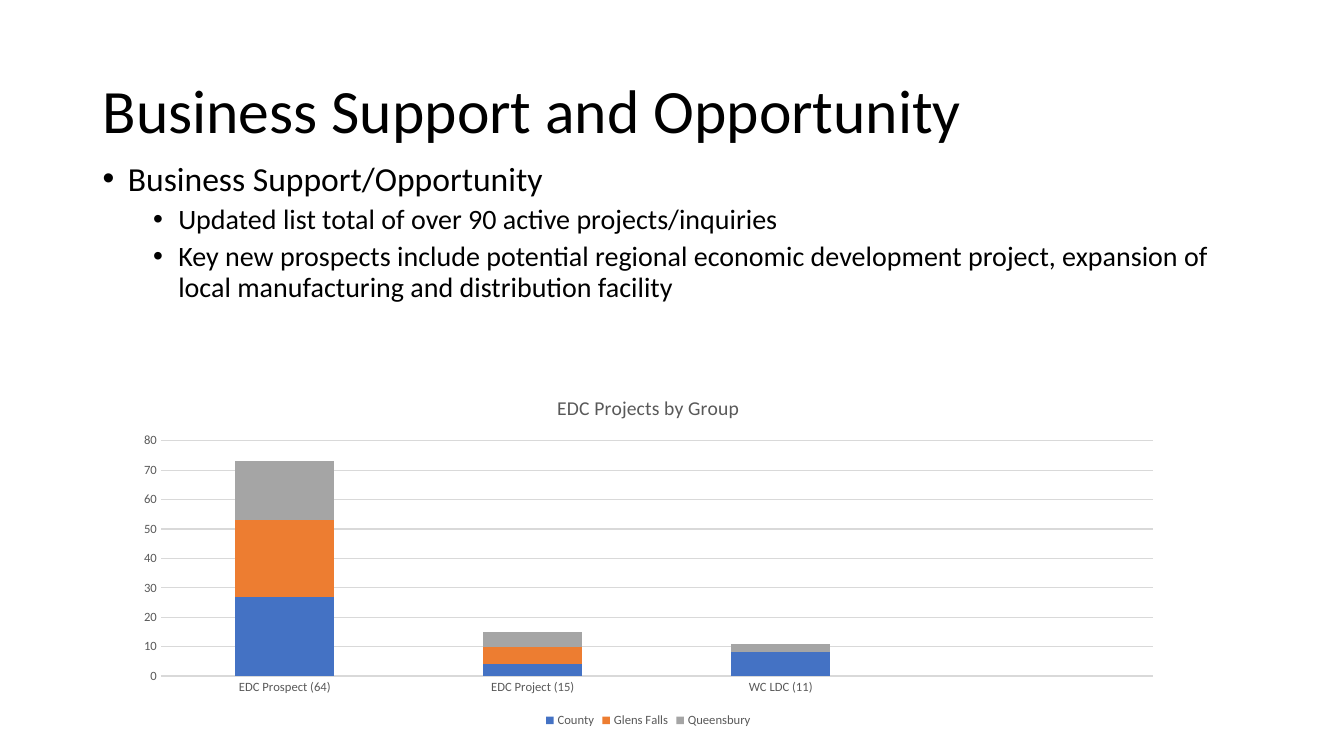
from dataclasses import dataclass

from lxml.etree import SubElement
from pptx import Presentation
from pptx.chart.data import CategoryChartData
from pptx.dml.color import RGBColor
from pptx.enum.chart import XL_CHART_TYPE as ChartType
from pptx.enum.chart import XL_LEGEND_POSITION as LegendPosition
from pptx.enum.chart import XL_TICK_MARK as TickMark
from pptx.enum.text import MSO_ANCHOR as Anchor
from pptx.oxml.ns import qn
from pptx.util import Inches, Pt

FONT = "Calibri"
COLORS = {
    "text": "000000",
    "label": "595959",
    "grid": "D9D9D9",
    "county": "4472C4",
    "glens_falls": "ED7D31",
    "queensbury": "A5A5A5",
}


@dataclass
class Bullet:
    text: str
    level: int
    size: int
    space_before: int


@dataclass
class Municipality:
    name: str
    counts: tuple[int | None, ...]
    color: str


BULLETS = [
    Bullet("Business Support/Opportunity", 0, 24, 10),
    Bullet("Updated list total of over 90 active projects/inquiries", 1, 20, 5),
    Bullet("Key new prospects include potential regional economic development project, "
           "expansion of local manufacturing and distribution facility", 1, 20, 5),
]
# The last group is an unlabelled, empty slot
GROUPS = ["EDC Prospect (64)", "EDC Project (15)", "WC LDC (11)", ""]
MUNICIPALITIES = [
    Municipality("County", (27, 4, 8, None), "county"),
    Municipality("Glens Falls", (26, 6, None, None), "glens_falls"),
    Municipality("Queensbury", (20, 5, 3, None), "queensbury"),
]


def rgb(name: str) -> RGBColor:
    return RGBColor.from_string(COLORS[name])


def style_font(font, size: int, color: str) -> None:
    font.name = FONT
    font.size = Pt(size)
    font.bold = False
    font.color.rgb = rgb(color)


def add_text_frame(slide, left: float, top: float, width: float, height: float):
    frame = slide.shapes.add_textbox(
        Inches(left), Inches(top), Inches(width), Inches(height)).text_frame
    frame.word_wrap = True
    return frame


def add_heading(slide) -> None:
    frame = add_text_frame(slide, 0.92, 0.4, 11.5, 1.45)
    frame.vertical_anchor = Anchor.MIDDLE
    frame.text = "Business Support and Opportunity"
    heading = frame.paragraphs[0]
    heading.line_spacing = 0.9
    style_font(heading.runs[0].font, 44, "text")


def add_bullets(slide) -> None:
    frame = add_text_frame(slide, 0.92, 1.56, 11.5, 4.76)
    frame.text = "\n".join(bullet.text for bullet in BULLETS)
    for paragraph, bullet in zip(frame.paragraphs, BULLETS):
        paragraph.level = bullet.level
        paragraph.line_spacing = 0.9
        paragraph.space_before = Pt(bullet.space_before)
        style_font(paragraph.runs[0].font, bullet.size, "text")
        # Hanging indent and bullet character
        properties = paragraph._p.get_or_add_pPr()
        properties.set("marL", str(Inches(0.25 + 0.5 * bullet.level)))
        properties.set("indent", str(Inches(-0.25)))
        SubElement(properties, qn("a:buFont"), typeface="Arial")
        SubElement(properties, qn("a:buChar"), char="•")


def style_axis(axis) -> None:
    axis.major_tick_mark = TickMark.NONE
    axis.minor_tick_mark = TickMark.NONE
    style_font(axis.tick_labels.font, 9, "label")


def style_line(line) -> None:
    line.color.rgb = rgb("grid")
    line.width = Pt(0.75)


def add_projects_chart(slide) -> None:
    data = CategoryChartData()
    data.categories = GROUPS
    for municipality in MUNICIPALITIES:
        data.add_series(municipality.name, municipality.counts)
    chart = slide.shapes.add_chart(
        ChartType.COLUMN_STACKED, Inches(1.22), Inches(3.75),
        Inches(10.42), Inches(3.51), data).chart
    style_font(chart.font, 10, "text")

    # Title and legend
    chart.has_title = True
    chart_title = chart.chart_title.text_frame
    chart_title.text = "EDC Projects by Group"
    style_font(chart_title.paragraphs[0].runs[0].font, 14, "label")
    chart.has_legend = True
    chart.legend.position = LegendPosition.BOTTOM
    chart.legend.include_in_layout = False
    style_font(chart.legend.font, 9, "label")

    # Axes
    groups, counts = chart.category_axis, chart.value_axis
    style_axis(groups)
    style_axis(counts)
    style_line(groups.format.line)
    counts.format.line.fill.background()
    counts.minimum_scale, counts.maximum_scale, counts.major_unit = 0, 80, 10
    counts.has_major_gridlines = True
    style_line(counts.major_gridlines.format.line)

    # Stacked columns
    columns = chart.plots[0]
    columns.gap_width = 150
    columns.overlap = 100
    columns.vary_by_categories = False
    for series, municipality in zip(columns.series, MUNICIPALITIES):
        series.format.fill.solid()
        series.format.fill.fore_color.rgb = rgb(municipality.color)


def main() -> None:
    presentation = Presentation()
    presentation.slide_width = Inches(13.33)
    presentation.slide_height = Inches(7.5)
    slide = presentation.slides.add_slide(presentation.slide_layouts[6])
    add_heading(slide)
    add_bullets(slide)
    add_projects_chart(slide)
    presentation.save("out.pptx")


if __name__ == "__main__":
    main()
